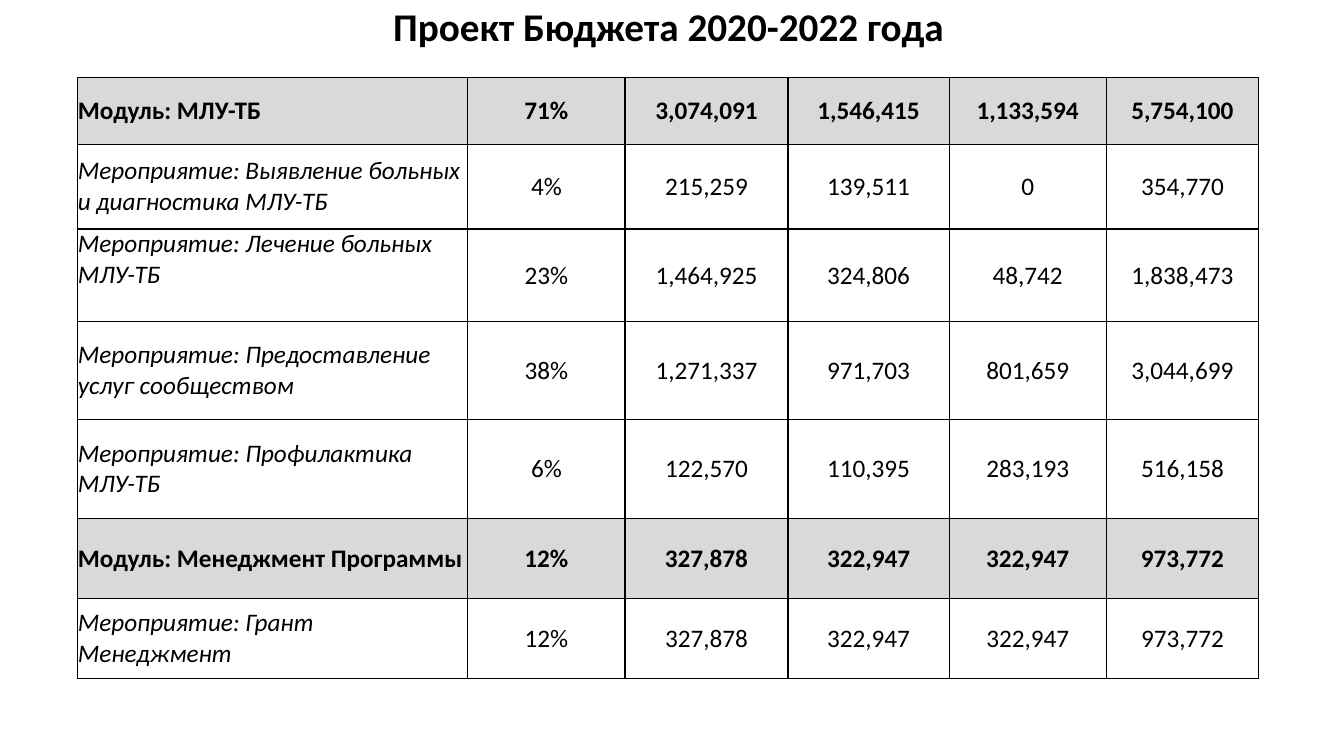
"""Build the 2020-2022 draft budget slide."""
from dataclasses import dataclass

from lxml import etree
from pptx import Presentation
from pptx.dml.color import RGBColor
from pptx.enum.text import MSO_ANCHOR, MSO_AUTO_SIZE, PP_ALIGN
from pptx.oxml.ns import qn
from pptx.slide import Slide
from pptx.table import _Cell
from pptx.text.text import _Paragraph
from pptx.util import Cm, Pt

LEFT, CENTER = PP_ALIGN.LEFT, PP_ALIGN.CENTER
TOP, MIDDLE = MSO_ANCHOR.TOP, MSO_ANCHOR.MIDDLE
NO_AUTOFIT = MSO_AUTO_SIZE.NONE

COLORS = {"text": "000000", "border": "000000", "module": "D9D9D9", "activity": "FFFFFF"}
TITLE_FORMAT = {"name": "Calibri", "size": Pt(28), "bold": True}
MODULE_FORMAT = {"name": "Calibri", "size": Pt(18), "bold": True, "italic": False}
VALUE_FORMAT = MODULE_FORMAT | {"bold": False}
ACTIVITY_FORMAT = VALUE_FORMAT | {"italic": True}
TITLE_FRAME = {"left": Cm(2.24), "top": Cm(0), "width": Cm(29.21), "height": Cm(1.47)}
CELL_FORMAT = dict.fromkeys(("margin_left", "margin_right", "margin_top", "margin_bottom"), 0)
TABLE_LEFT, TABLE_TOP = 1.96, 1.96
COLUMN_WIDTHS = (9.83, 3.96, 4.11, 4.06, 3.96, 3.84)
BORDER_TAGS = ("a:lnL", "a:lnR", "a:lnT", "a:lnB")
BORDER_WIDTH = Pt(1)


@dataclass(frozen=True)
class BudgetRow:
    """One budget line: its label, figures and row height in centimetres."""

    label: str
    figures: str
    height: float
    is_module: bool = False
    label_anchor: MSO_ANCHOR = MIDDLE


BUDGET_ROWS = (
    BudgetRow("Модуль: МЛУ-ТБ", "71% 3,074,091 1,546,415 1,133,594 5,754,100", 1.68, True),
    BudgetRow("Мероприятие: Выявление больных и диагностика МЛУ-ТБ",
              "4% 215,259 139,511 0 354,770", 2.13),
    BudgetRow("Мероприятие: Лечение больных МЛУ-ТБ",
              "23% 1,464,925 324,806 48,742 1,838,473", 2.34, label_anchor=TOP),
    BudgetRow("Мероприятие: Предоставление услуг сообществом",
              "38% 1,271,337 971,703 801,659 3,044,699", 2.46),
    BudgetRow("Мероприятие: Профилактика МЛУ-ТБ", "6% 122,570 110,395 283,193 516,158", 2.49),
    BudgetRow("Модуль: Менеджмент Программы", "12% 327,878 322,947 322,947 973,772", 2.03, True),
    BudgetRow("Мероприятие: Грант Менеджмент", "12% 327,878 322,947 322,947 973,772", 2.01),
)


def apply_format(target: object, values: dict) -> None:
    """Set every attribute named in the format values."""
    for name, value in values.items():
        setattr(target, name, value)


def write_text(paragraph: _Paragraph, text: str, font_format: dict, alignment: PP_ALIGN) -> None:
    """Write one formatted run into a paragraph."""
    paragraph.alignment = alignment
    run = paragraph.add_run()
    run.text = text
    apply_format(run.font, font_format)
    run.font.color.rgb = RGBColor.from_string(COLORS["text"])


def add_borders(cell: _Cell) -> None:
    """Draw a solid line on all four sides of a cell."""
    properties = cell._tc.get_or_add_tcPr()
    for position, tag in enumerate(BORDER_TAGS):
        line = etree.Element(qn(tag), w=str(BORDER_WIDTH))
        fill = etree.SubElement(line, qn("a:solidFill"))
        etree.SubElement(fill, qn("a:srgbClr"), val=COLORS["border"])
        properties.insert(position, line)


def fill_cell(cell: _Cell, text: str, font_format: dict, alignment: PP_ALIGN,
              anchor: MSO_ANCHOR, color: str) -> None:
    """Fill, border and label one table cell."""
    apply_format(cell, CELL_FORMAT | {"vertical_anchor": anchor})
    cell.fill.solid()
    cell.fill.fore_color.rgb = RGBColor.from_string(color)
    add_borders(cell)
    write_text(cell.text_frame.paragraphs[0], text, font_format, alignment)


def add_title(slide: Slide, text: str) -> None:
    """Place and write the slide title."""
    title = slide.shapes.title
    apply_format(title, TITLE_FRAME)
    apply_format(title.text_frame, {"auto_size": NO_AUTOFIT, "vertical_anchor": MIDDLE,
                                    "word_wrap": True})
    paragraph = title.text_frame.paragraphs[0]
    paragraph.line_spacing = 0.9
    write_text(paragraph, text, TITLE_FORMAT, CENTER)


def add_budget_table(slide: Slide) -> None:
    """Add the table of modules and activities."""
    table = slide.shapes.add_table(
        len(BUDGET_ROWS), len(COLUMN_WIDTHS), Cm(TABLE_LEFT), Cm(TABLE_TOP),
        Cm(sum(COLUMN_WIDTHS)), Cm(sum(row.height for row in BUDGET_ROWS))).table
    apply_format(table, {"first_row": False, "horz_banding": False})
    for column, width in zip(table.columns, COLUMN_WIDTHS):
        column.width = Cm(width)
    for table_row, budget_row in zip(table.rows, BUDGET_ROWS):
        table_row.height = Cm(budget_row.height)
        color = COLORS["module" if budget_row.is_module else "activity"]
        label_format = MODULE_FORMAT if budget_row.is_module else ACTIVITY_FORMAT
        figure_format = MODULE_FORMAT if budget_row.is_module else VALUE_FORMAT
        label_cell, *figure_cells = table_row.cells
        fill_cell(label_cell, budget_row.label, label_format, LEFT,
                  budget_row.label_anchor, color)
        for cell, figure in zip(figure_cells, budget_row.figures.split()):
            fill_cell(cell, figure, figure_format, CENTER, MIDDLE, color)


def main() -> None:
    """Create and save the presentation."""
    presentation = Presentation()
    apply_format(presentation, {"slide_width": Cm(33.87), "slide_height": Cm(19.05)})
    slide = presentation.slides.add_slide(presentation.slide_layouts[5])
    add_title(slide, "Проект Бюджета 2020-2022 года")
    add_budget_table(slide)
    presentation.save("out.pptx")


if __name__ == "__main__":
    main()
